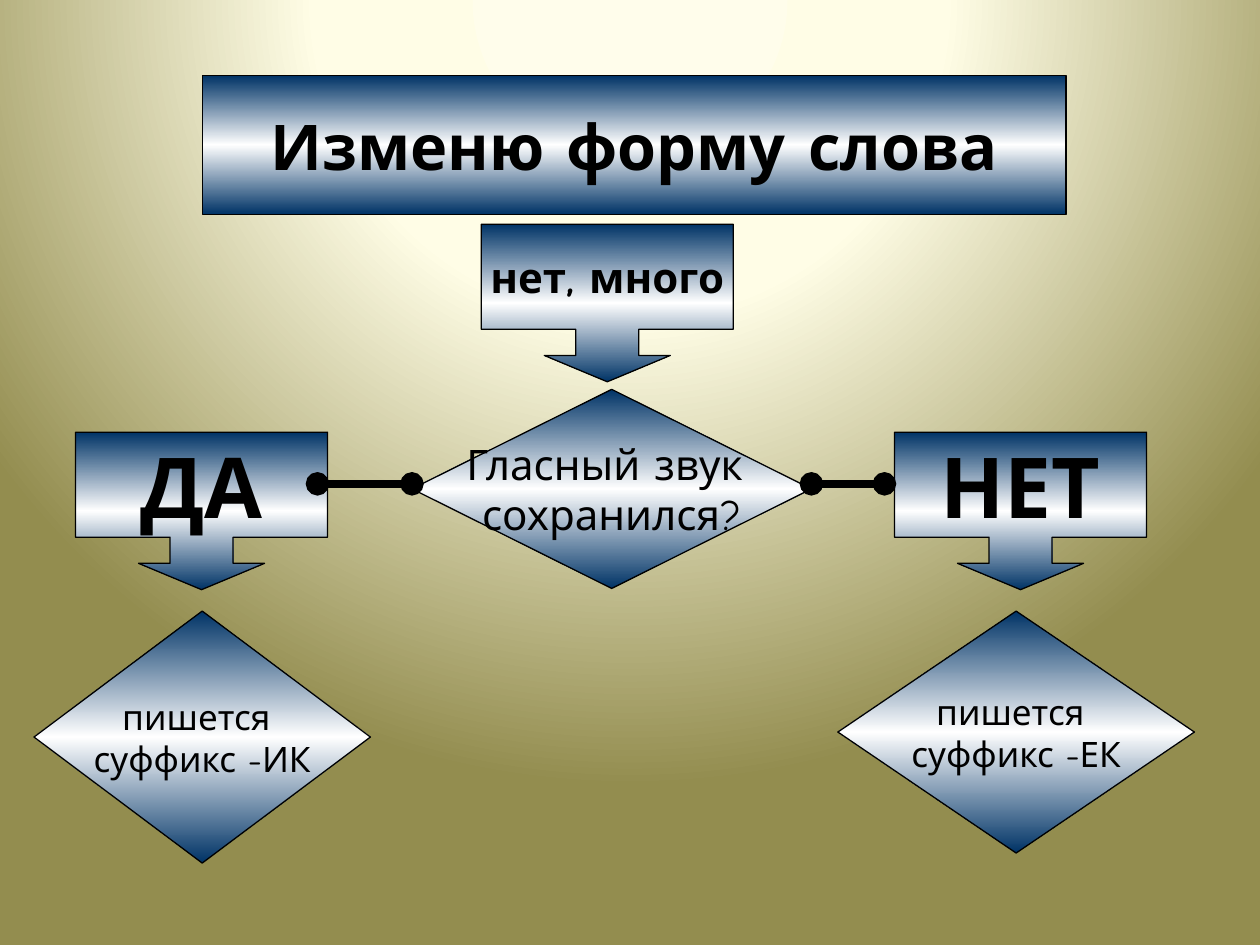
from lxml import etree
from pptx import Presentation
from pptx.dml.color import RGBColor
from pptx.enum.shapes import MSO_CONNECTOR, MSO_SHAPE
from pptx.enum.text import MSO_ANCHOR, MSO_AUTO_SIZE, PP_ALIGN
from pptx.oxml import parse_xml
from pptx.oxml.ns import nsdecls, qn
from pptx.util import Inches, Pt

COLORS = {
    "navy": "003366",
    "white": "FFFFFF",
    "black": "000000",
    "cream": "FFFDEB",
    "ivory": "FFFDE6",
    "olive": "938D4F",
}
FONT = "Comic Neue"
BLACK = RGBColor.from_string(COLORS["black"])
SHAPE_STOPS = [(0, "navy"), (50, "white"), (100, "navy")]
SHAPE_DIRECTION = '<a:lin ang="5400000" scaled="1"/>'
PAGE_STOPS = [(0, "cream"), (40, "ivory"), (100, "olive")]
PAGE_DIRECTION = (
    '<a:path path="circle">'
    '<a:fillToRect l="50000" t="-80000" r="50000" b="180000"/></a:path>'
)


def set_gradient(fill, element, stops, direction):
    """Give the fill, held somewhere in element, any number of stops."""
    fill.gradient()
    old = element.find(".//" + qn("a:gradFill"))
    stop_list = "".join(
        f'<a:gs pos="{position * 1000}"><a:srgbClr val="{COLORS[color]}"/></a:gs>'
        for position, color in stops
    )
    new = parse_xml(
        f'<a:gradFill {nsdecls("a")} rotWithShape="1">'
        f"<a:gsLst>{stop_list}</a:gsLst>{direction}</a:gradFill>"
    )
    old.getparent().replace(old, new)


def format_block(shape, lines, size, bold):
    set_gradient(shape.fill, shape._element.spPr, SHAPE_STOPS, SHAPE_DIRECTION)
    shape.shadow.inherit = False
    shape.line.color.rgb = BLACK
    shape.line.width = Pt(0.75)
    frame = shape.text_frame
    frame.text = "\n".join(lines)
    frame_format = {
        "word_wrap": False,
        "auto_size": MSO_AUTO_SIZE.NONE,
        "vertical_anchor": MSO_ANCHOR.MIDDLE,
    }
    for name, value in frame_format.items():
        setattr(frame, name, value)
    font_format = {"name": FONT, "size": Pt(size), "bold": bold}
    for paragraph in frame.paragraphs:
        paragraph.alignment = PP_ALIGN.CENTER
        for run in paragraph.runs:
            for name, value in font_format.items():
                setattr(run.font, name, value)
            run.font.color.rgb = BLACK


presentation = Presentation()
presentation.slide_width = Inches(10)
presentation.slide_height = Inches(7.5)
slide = presentation.slides.add_slide(presentation.slide_layouts[5])
set_gradient(slide.background.fill, slide._element, PAGE_STOPS, PAGE_DIRECTION)

# Title
title = slide.shapes.title
title_box = {"left": 1.61, "top": 0.6, "width": 6.85, "height": 1.1}
for name, value in title_box.items():
    setattr(title, name, Inches(value))
format_block(title, ["Изменю форму слова"], 36, True)

# Question and the two rules
decisions = [
    ((3.27, 3.09, 3.17, 1.58), ["Гласный звук ", "сохранился?"], 24),
    ((6.65, 4.85, 2.83, 1.92), ["пишется ", "суффикс -ЕК"], 20),
    ((0.27, 4.85, 2.67, 2), ["пишется ", "суффикс -ИК"], 20),
]
for box, lines, size in decisions:
    decision = slide.shapes.add_shape(
        MSO_SHAPE.FLOWCHART_DECISION, *map(Inches, box)
    )
    format_block(decision, lines, size, False)

# Callouts pointing down to the next step
callouts = [
    (0.6, 3.43, "ДА", 48),
    (7.1, 3.43, "НЕТ", 48),
    (3.82, 1.78, "нет, много", 24),
]
for left, top, text, size in callouts:
    callout = slide.shapes.add_shape(
        MSO_SHAPE.DOWN_ARROW_CALLOUT,
        Inches(left), Inches(top), Inches(2), Inches(1.25),
    )
    for index, value in enumerate((0.4, 0.4, 0.167, 0.667)):
        callout.adjustments[index] = value
    format_block(callout, [text], size, True)

# Links from the question to its answers
link_y = Inches(3.84)
for start, end in [(3.27, 2.52), (7.02, 6.44)]:
    link = slide.shapes.add_connector(
        MSO_CONNECTOR.STRAIGHT, Inches(start), link_y, Inches(end), link_y
    )
    link.line.color.rgb = BLACK
    link.line.width = Pt(4.5)
    line_properties = link.line._get_or_add_ln()
    for tag in ("a:headEnd", "a:tailEnd"):
        etree.SubElement(line_properties, qn(tag), type="oval")
    etree.SubElement(link._element.spPr, qn("a:effectLst"))

presentation.save("out.pptx")
